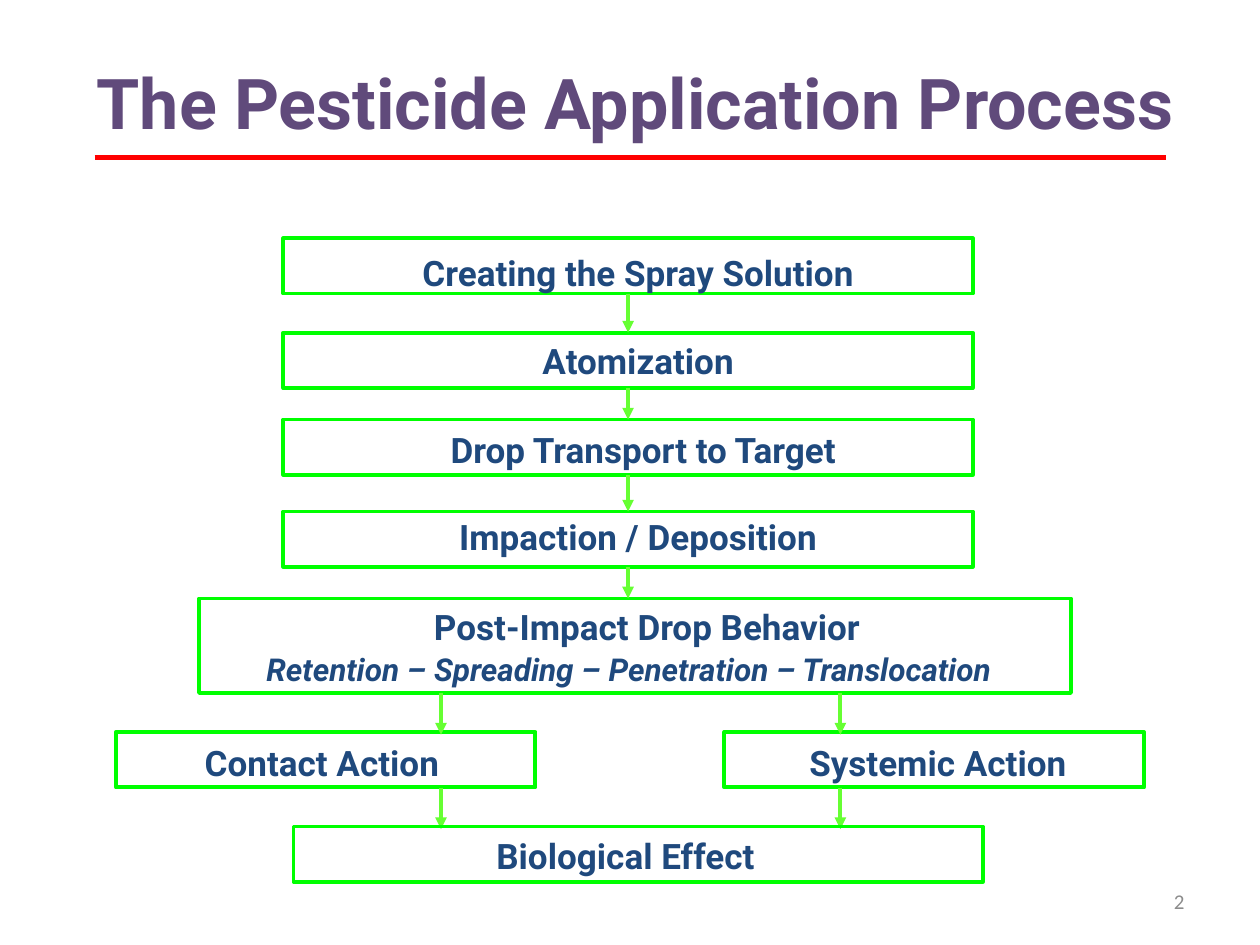
from lxml.etree import SubElement
from pptx import Presentation
from pptx.dml.color import RGBColor
from pptx.enum.shapes import MSO_CONNECTOR, MSO_SHAPE
from pptx.enum.text import MSO_ANCHOR, PP_ALIGN
from pptx.oxml.ns import qn
from pptx.util import Inches, Pt

PURPLE = RGBColor(0x60, 0x4A, 0x7B)
NAVY = RGBColor(0x1F, 0x49, 0x7D)
GREEN = RGBColor(0x00, 0xFF, 0x00)
LIGHT_GREEN = RGBColor(0x66, 0xFF, 0x33)
RED = RGBColor(0xFF, 0x00, 0x00)
GRAY = RGBColor(0x8C, 0x8C, 0x8C)

TOP, BOTTOM = 0, 2
STEP_LEFT, STEP_WIDTH, STEP_HEIGHT = 2.25, 5.47, 0.44
STEP_CENTER = STEP_LEFT + STEP_WIDTH / 2
# Label, top of the box, nudge of the label to the right and down
STEPS = [
    ("Creating the Spray Solution", 1.89, 0.08, 0.05),
    ("Atomization", 2.64, 0.08, 0),
    ("Drop Transport to Target", 3.33, 0.12, 0.02),
    ("Impaction / Deposition", 4.06, 0.08, -0.02),
]
# Label, left of the box, nudge of the label, x of the arrows
ACTIONS = [
    ("Contact Action", 0.92, -0.03, 3.5),
    ("Systemic Action", 5.75, 0.03, 6.67),
]


class FlowSlide:
    def __init__(self, slide, font="Roboto", size=20, color=NAVY):
        self.slide = slide
        self.font = font
        self.size = size
        self.color = color

    def format_paragraph(self, paragraph, font=None, size=None, color=None,
                         bold=True, italic=False, alignment=PP_ALIGN.CENTER):
        paragraph.alignment = alignment
        for run in paragraph.runs:
            run.font.name = font or self.font
            run.font.size = Pt(size or self.size)
            run.font.color.rgb = color or self.color
            run.font.bold = bold
            run.font.italic = italic

    def text(self, text, left, top, width, height, anchor=MSO_ANCHOR.TOP, **style):
        shape = self.slide.shapes.add_textbox(
            Inches(left), Inches(top), Inches(width), Inches(height))
        frame = shape.text_frame
        frame.word_wrap = True
        frame.vertical_anchor = anchor
        frame.text = text
        self.format_paragraph(frame.paragraphs[0], **style)

    def box(self, text, left, top, width, height=STEP_HEIGHT, right=0, down=0):
        """Add an outlined box; right and down nudge its centred label."""
        shape = self.slide.shapes.add_shape(
            MSO_SHAPE.RECTANGLE, Inches(left), Inches(top), Inches(width), Inches(height))
        shape.shadow.inherit = False
        shape.fill.background()
        shape.line.color.rgb = GREEN
        shape.line.width = Pt(2.25)
        frame = shape.text_frame
        frame.word_wrap = True
        frame.vertical_anchor = MSO_ANCHOR.MIDDLE
        frame.margin_left = Inches(max(0, 2 * right))
        frame.margin_right = Inches(max(0, -2 * right))
        frame.margin_top = Inches(max(0, 2 * down))
        frame.margin_bottom = Inches(max(0, -2 * down))
        frame.text = text
        for paragraph in frame.paragraphs:
            self.format_paragraph(paragraph)
        return shape

    def line(self, x1, y1, x2, y2, color, width):
        connector = self.slide.shapes.add_connector(
            MSO_CONNECTOR.STRAIGHT, Inches(x1), Inches(y1), Inches(x2), Inches(y2))
        connector.line.color.rgb = color
        connector.line.width = Pt(width)
        SubElement(connector._element.spPr, qn("a:effectLst"))
        return connector

    def arrow(self, x, top, bottom):
        connector = self.line(x, top, x, bottom, LIGHT_GREEN, 2.25)
        SubElement(connector.line._get_or_add_ln(), qn("a:tailEnd"), type="triangle")
        return connector


def main():
    presentation = Presentation()
    presentation.slide_width = Inches(10)
    presentation.slide_height = Inches(7.5)
    flow = FlowSlide(presentation.slides.add_slide(presentation.slide_layouts[6]))

    flow.text("The Pesticide Application Process", 0.25, 0.42, 9.58, 1.33,
              size=40, color=PURPLE)
    flow.line(0.75, 1.25, 9.25, 1.25, RED, 3)

    steps = [flow.box(label, STEP_LEFT, top, STEP_WIDTH, right=right, down=down)
             for label, top, right, down in STEPS]
    for index in range(len(steps) - 1):
        arrow = flow.arrow(STEP_CENTER, STEPS[index][1] + STEP_HEIGHT, STEPS[index + 1][1])
        arrow.begin_connect(steps[index], BOTTOM)
        arrow.end_connect(steps[index + 1], TOP)

    behavior = flow.box(
        "Post-Impact Drop Behavior\nRetention – Spreading – Penetration – Translocation",
        1.58, 4.75, 6.92, 0.75, right=-0.05)
    heading, details = behavior.text_frame.paragraphs
    heading.line_spacing = details.line_spacing = 1.05
    heading._p.get_or_add_pPr().set("marL", str(Inches(0.29)))
    flow.format_paragraph(details, size=18, italic=True)
    flow.arrow(STEP_CENTER, 4.5, 4.75).begin_connect(steps[-1], BOTTOM)

    for label, left, right, arrow_x in ACTIONS:
        flow.box(label, left, 5.81, 3.33, right=right, down=0.02)
        flow.arrow(arrow_x, 5.5, 5.83)
        flow.arrow(arrow_x, 6.25, 6.58)
    flow.box("Biological Effect", 2.33, 6.56, STEP_WIDTH, right=-0.1, down=0.01)

    flow.text("2", 7.17, 6.95, 2.33, 0.4, anchor=MSO_ANCHOR.MIDDLE, font="Calibri",
              size=12, color=GRAY, bold=False, alignment=PP_ALIGN.RIGHT)
    presentation.save("out.pptx")


if __name__ == "__main__":
    main()
